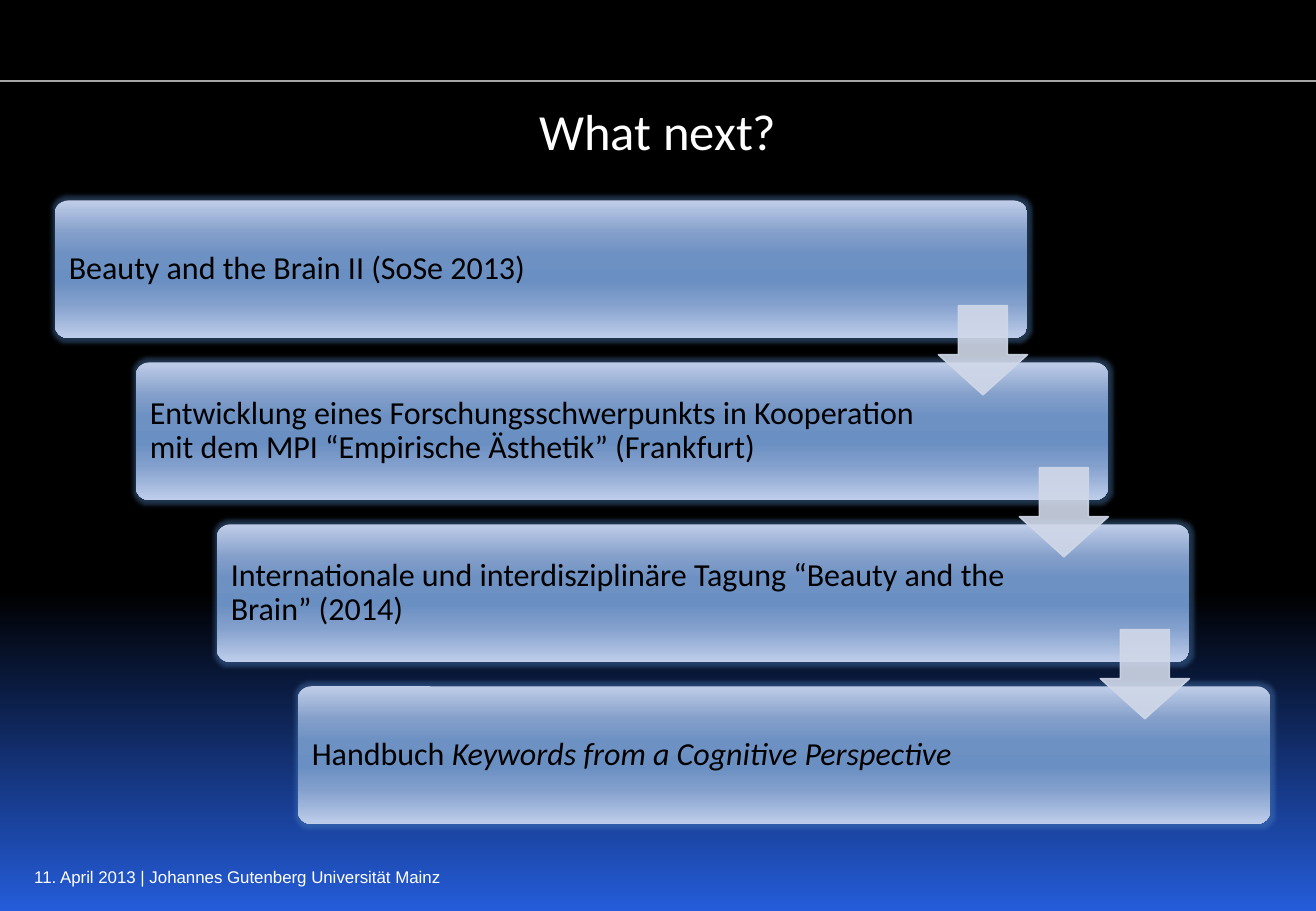
from dataclasses import dataclass

from lxml import etree
from pptx import Presentation
from pptx import util as u
from pptx.dml.color import RGBColor
from pptx.enum import shapes, text
from pptx.oxml.ns import qn

PX = 7620  # EMU per px, 120 px to the inch


@dataclass(frozen=True)
class Theme:
    heading_font: str = "Calibri"
    footer_font: str = "Arial"
    title_size: int = 30
    step_size: int = 19
    footer_size: int = 10
    light: str = "FFFFFF"
    dark: str = "000000"
    rule: str = "A6A6A6"
    arrow: str = "D0D8E8"
    glow: str = "4F81BD"
    backdrop: tuple = ((0, "000000"), (65, "000000"), (100, "245CD9"))
    step_fill: tuple = ((0, "BFCDE8"), (25, "819DC9"), (40, "6D91C3"), (50, "6A8FC3"),
                        (60, "6D91C3"), (75, "83A0CD"), (100, "BECDEA"))


THEME = Theme()
WIDTH, HEIGHT = 1300, 900

# Each step is a list of (wording, italic) runs
STEPS = [
    [("Beauty and the Brain II (SoSe 2013)", False)],
    [("Entwicklung eines Forschungsschwerpunkts in Kooperation mit dem MPI "
      "“Empirische Ästhetik” (Frankfurt)", False)],
    [("Internationale und interdisziplinäre Tagung “Beauty and the Brain” (2014)", False)],
    [("Handbuch ", False), ("Keywords from a Cognitive Perspective", True)],
]
STEP_LEFT, STEP_TOP, STEP_WIDTH, STEP_HEIGHT = 54, 198, 961, 136
SHIFT_X, SHIFT_Y = 80, 160
ARROW_SIZE, ARROW_DROP = 88, 104


def px(*lengths):
    return [u.Emu(length * PX) for length in lengths]


def add_color(parent, color, alpha=None):
    node = etree.SubElement(parent, qn("a:srgbClr"), val=color)
    if alpha is not None:
        etree.SubElement(node, qn("a:alpha"), val=str(alpha * 1000))


def fill_downward(fill, owner, stops):
    """Give the fill held in the owner's XML a top-to-bottom gradient."""
    fill.gradient()
    fill.gradient_angle = 270
    stop_list = next(owner.iter(qn("a:gsLst")))
    for old_stop in list(stop_list):
        stop_list.remove(old_stop)
    for position, color in stops:
        stop = etree.SubElement(stop_list, qn("a:gs"), pos=str(position * 1000))
        add_color(stop, color)


def add_runs(paragraph, runs, font, size, color):
    for wording, italic in runs:
        run = paragraph.add_run()
        run.text = wording
        run.font.name = font
        run.font.size = u.Pt(size)
        run.font.italic = italic
        run.font.color.rgb = RGBColor.from_string(color)


def add_label(slide, box, wording, font, size, align):
    frame = slide.shapes.add_textbox(*px(*box)).text_frame
    frame.word_wrap = True
    paragraph = frame.paragraphs[0]
    paragraph.alignment = align
    add_runs(paragraph, [(wording, False)], font, size, THEME.light)


def add_rule(slide, y):
    rule = slide.shapes.add_connector(shapes.MSO_CONNECTOR.STRAIGHT, *px(0, y, WIDTH, y))
    rule.line.color.rgb = RGBColor.from_string(THEME.rule)
    rule.line.width = u.Pt(0.75)
    etree.SubElement(rule._element.spPr, qn("a:effectLst"))


def add_step(slide, left, top, runs):
    step = slide.shapes.add_shape(shapes.MSO_SHAPE.ROUNDED_RECTANGLE,
                                  *px(left, top, STEP_WIDTH, STEP_HEIGHT))
    step.adjustments[0] = 0.1
    fill_downward(step.fill, step._element, THEME.step_fill)
    step.line.fill.background()
    step.shadow.inherit = False
    effects = step._element.spPr.find(qn("a:effectLst"))
    add_color(etree.SubElement(effects, qn("a:glow"), rad="63500"), THEME.glow, 40)

    frame = step.text_frame
    frame.word_wrap = True
    frame.vertical_anchor = text.MSO_ANCHOR.MIDDLE
    frame.margin_left, frame.margin_right = px(10, 178)
    paragraph = frame.paragraphs[0]
    paragraph.alignment = text.PP_ALIGN.LEFT
    paragraph.line_spacing = 0.9
    add_runs(paragraph, runs, THEME.heading_font, THEME.step_size, THEME.dark)


def add_arrow(slide, left, top):
    arrow = slide.shapes.add_shape(shapes.MSO_SHAPE.DOWN_ARROW,
                                   *px(left, top, ARROW_SIZE, ARROW_SIZE))
    arrow.adjustments[0] = 0.55
    arrow.adjustments[1] = 0.45
    arrow.shadow.inherit = False
    arrow.line.width = u.Pt(0.94)
    for fill in (arrow.fill, arrow.line.fill):
        fill.solid()
        fill.fore_color.rgb = RGBColor.from_string(THEME.arrow)
    for color in arrow._element.spPr.iter(qn("a:srgbClr")):
        etree.SubElement(color, qn("a:alpha"), val="90000")


def add_staircase(slide):
    corners = [(STEP_LEFT + i * SHIFT_X, STEP_TOP + i * SHIFT_Y) for i in range(len(STEPS))]
    for (left, top), runs in zip(corners, STEPS):
        add_step(slide, left, top, runs)
    for left, top in corners[:-1]:
        add_arrow(slide, left + STEP_WIDTH - ARROW_SIZE, top + ARROW_DROP)


def main():
    deck = Presentation()
    deck.slide_width, deck.slide_height = px(WIDTH, HEIGHT)
    slide = deck.slides.add_slide(deck.slide_layouts[6])
    fill_downward(slide.background.fill, slide._element, THEME.backdrop)
    add_label(slide, (22, 850, 618, 40), "11. April 2013 | Johannes Gutenberg Universität Mainz",
              THEME.footer_font, THEME.footer_size, text.PP_ALIGN.LEFT)
    add_rule(slide, 80)
    add_label(slide, (0, 93, WIDTH, 84), "What next?",
              THEME.heading_font, THEME.title_size, text.PP_ALIGN.CENTER)
    add_staircase(slide)
    deck.save("out.pptx")


if __name__ == "__main__":
    main()
